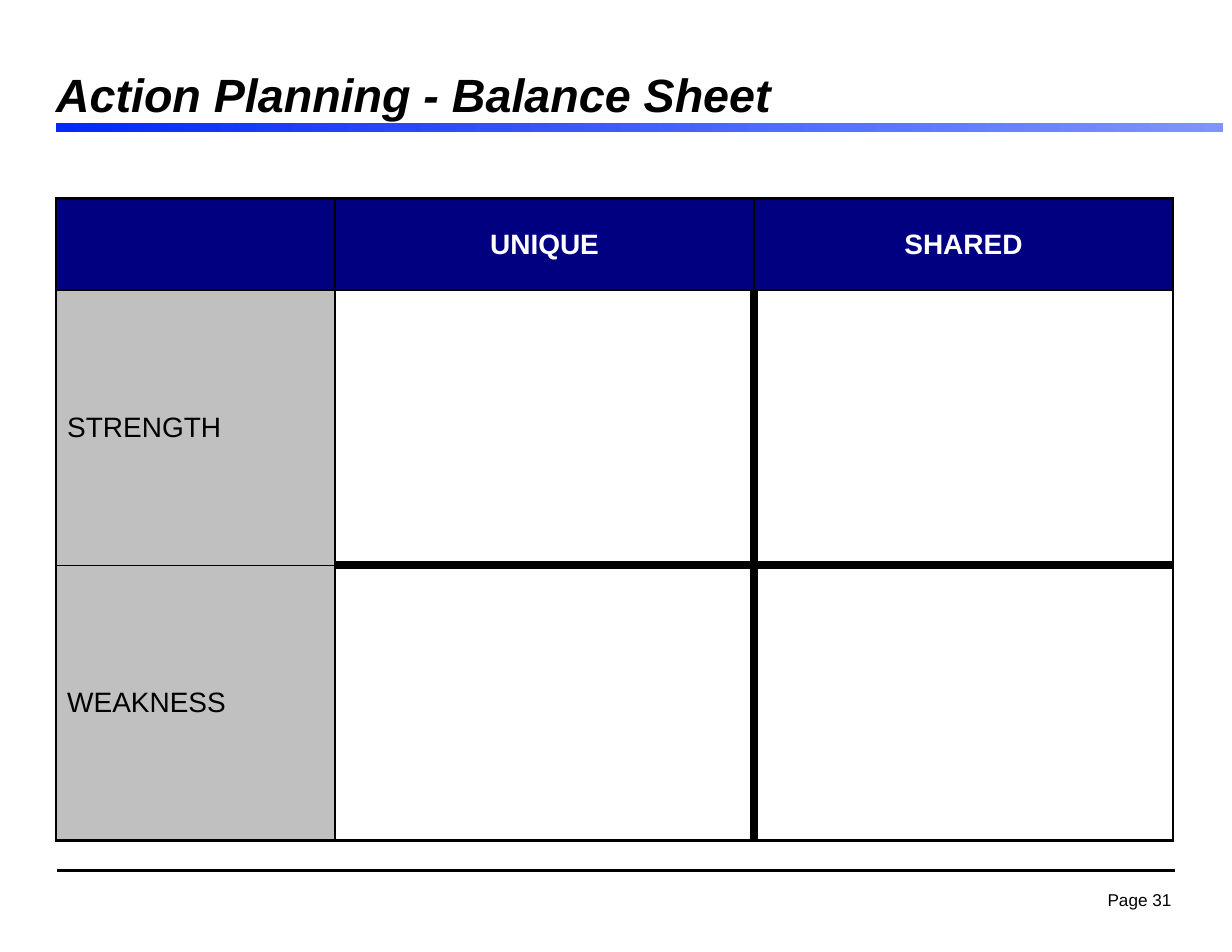
from dataclasses import dataclass

import pptx
import pptx.dml.color
import pptx.enum.shapes
import pptx.enum.text
import pptx.oxml
import pptx.oxml.ns
import pptx.util
from pptx.util import Cm

ALIGN = pptx.enum.text.PP_ALIGN
ANCHOR = pptx.enum.text.MSO_ANCHOR


@dataclass(frozen=True)
class Theme:
    font: str = "Arial"
    black: str = "000000"
    white: str = "FFFFFF"
    navy: str = "000080"
    gray: str = "C0C0C0"
    bar_start: str = "002AF9"
    bar_end: str = "7F94FC"
    title_size: int = 30
    table_size: int = 18
    page_size: int = 11
    thin: int = 1
    medium: int = 2
    thick: int = 6


def rgb(color):
    return pptx.dml.color.RGBColor.from_string(color)


class SlideBuilder:
    def __init__(self, slide, theme):
        self.slide = slide
        self.theme = theme

    def add_run(self, paragraph, text, size, color, align=ALIGN.LEFT, bold=False, italic=False):
        paragraph.alignment = align
        run = paragraph.add_run()
        run.text = text
        run.font.name = self.theme.font
        run.font.size = pptx.util.Pt(size)
        run.font.bold = bold
        run.font.italic = italic
        run.font.color.rgb = rgb(color)

    def text(self, box, text, size, anchor=ANCHOR.TOP, margins=(0, 0), spacing=None, **style):
        frame = self.slide.shapes.add_textbox(*map(Cm, box)).text_frame
        frame.word_wrap = False
        frame.vertical_anchor = anchor
        frame.margin_left = frame.margin_right = Cm(margins[0])
        frame.margin_top = frame.margin_bottom = Cm(margins[1])
        paragraph = frame.paragraphs[0]
        if spacing:
            paragraph.line_spacing = spacing
        self.add_run(paragraph, text, size, self.theme.black, **style)

    def gradient_bar(self, box, colors):
        bar = self.slide.shapes.add_shape(
            pptx.enum.shapes.MSO_SHAPE.RECTANGLE, *map(Cm, box))
        bar.shadow.inherit = False
        bar.line.fill.background()
        bar.fill.gradient()
        bar.fill.gradient_angle = 0
        for stop, color in zip(bar.fill.gradient_stops, colors):
            stop.color.rgb = rgb(color)

    def line(self, start, end, width):
        connector = self.slide.shapes.add_connector(
            pptx.enum.shapes.MSO_CONNECTOR.STRAIGHT, *map(Cm, start + end))
        connector.line.color.rgb = rgb(self.theme.black)
        connector.line.width = pptx.util.Pt(width)
        properties = connector._element.spPr
        properties.append(properties.makeelement(pptx.oxml.ns.qn("a:effectLst"), {}))

    def borders(self, cell, widths):
        properties = cell._tc.get_or_add_tcPr()
        for side, width in zip("LRTB", widths):
            properties.append(pptx.oxml.parse_xml(
                f'<a:ln{side} {pptx.oxml.ns.nsdecls("a")} w="{pptx.util.Pt(width)}">'
                f'<a:solidFill><a:srgbClr val="{self.theme.black}"/></a:solidFill>'
                f'</a:ln{side}>'))

    def table(self, left, top, column_widths, row_heights, rows):
        theme = self.theme
        table = self.slide.shapes.add_table(
            len(row_heights), len(column_widths), Cm(left), Cm(top),
            Cm(sum(column_widths)), Cm(sum(row_heights))).table
        table.first_row = table.horz_banding = False
        for column, width in zip(table.columns, column_widths):
            column.width = Cm(width)
        for row, height in zip(table.rows, row_heights):
            row.height = Cm(height)

        last_row = len(rows) - 1
        for r, texts in enumerate(rows):
            for c, text in enumerate(texts):
                cell = table.cell(r, c)
                cell.vertical_anchor = ANCHOR.MIDDLE
                header, body = r == 0, r > 0 and c > 0

                # Thick cross between the four body cells
                self.borders(cell, (
                    theme.thick if body and c == 2 else theme.thin,
                    theme.thick if body and c == 1 else theme.thin,
                    theme.medium if header else theme.thick if body and r == 2 else theme.thin,
                    theme.medium if r == last_row else theme.thick if body else theme.thin))

                if body:
                    cell.fill.background()
                else:
                    cell.fill.solid()
                    cell.fill.fore_color.rgb = rgb(theme.navy if header else theme.gray)
                if text:
                    self.add_run(cell.text_frame.paragraphs[0], text, theme.table_size,
                                 theme.white if header else theme.black,
                                 ALIGN.CENTER if header else ALIGN.LEFT, bold=header)


def main():
    theme = Theme()
    presentation = pptx.Presentation()
    presentation.slide_width = Cm(27.94)
    presentation.slide_height = Cm(21.59)
    slide = presentation.slides.add_slide(presentation.slide_layouts[6])
    builder = SlideBuilder(slide, theme)

    # Footer
    builder.line((1.3, 19.74), (26.64, 19.74), theme.medium)
    builder.text((24.79, 20.07, 2.06, 0.71), "Page 31", theme.page_size,
                 margins=(0.28, 0.15), spacing=0.9, align=ALIGN.RIGHT)

    # Title and its underline
    builder.gradient_bar((1.27, 2.8, 26.47, 0.2), (theme.bar_start, theme.bar_end))
    builder.text((1.27, 1.7, 26.24, 1.07), "Action Planning - Balance Sheet",
                 theme.title_size, anchor=ANCHOR.BOTTOM, bold=True, italic=True)

    # Balance sheet
    builder.table(1.27, 4.5, (6.33, 9.5, 9.5), (2.08, 6.24, 6.24), (
        ("", "UNIQUE", "SHARED"),
        ("STRENGTH", "", ""),
        ("WEAKNESS", "", "")))

    presentation.save("out.pptx")


if __name__ == "__main__":
    main()
